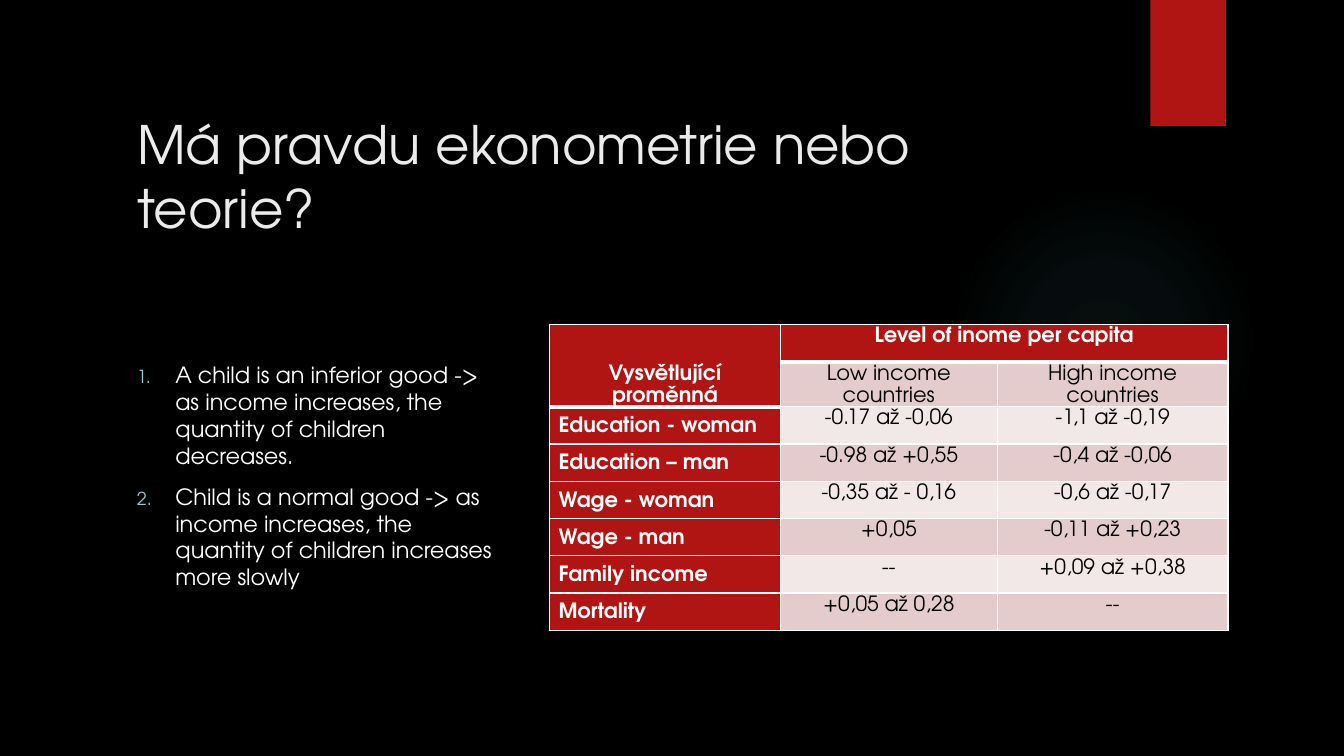
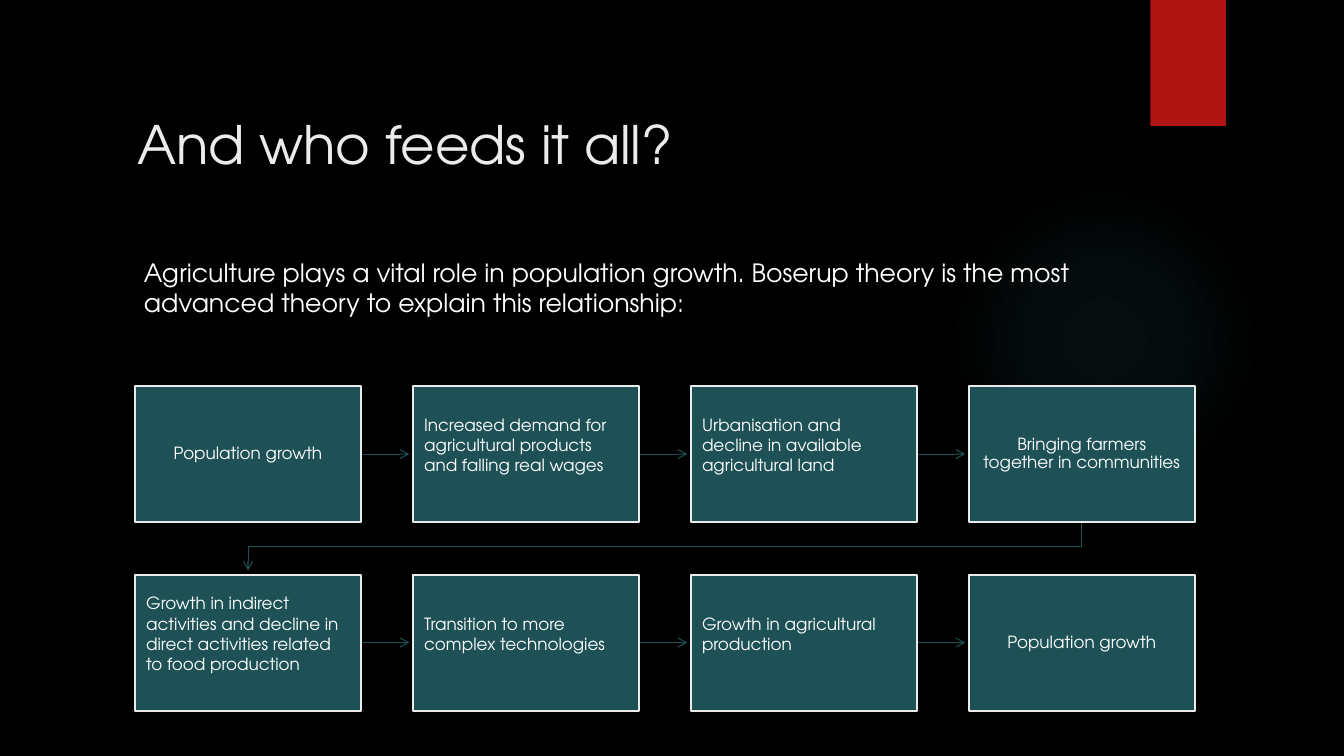
from dataclasses import dataclass

from pptx import Presentation
from pptx.dml.color import RGBColor
from pptx.enum.shapes import MSO_CONNECTOR, MSO_SHAPE
from pptx.enum.text import MSO_ANCHOR, MSO_AUTO_SIZE, PP_ALIGN
from pptx.oxml import parse_xml
from pptx.oxml.ns import nsdecls, qn
from pptx.util import Inches, Pt

STRAIGHT, ELBOW = MSO_CONNECTOR.STRAIGHT, MSO_CONNECTOR.ELBOW
RECT, OVAL = MSO_SHAPE.RECTANGLE, MSO_SHAPE.OVAL
TOP, MIDDLE, BOTTOM = MSO_ANCHOR.TOP, MSO_ANCHOR.MIDDLE, MSO_ANCHOR.BOTTOM
LEFT, CENTER = PP_ALIGN.LEFT, PP_ALIGN.CENTER
FIXED = MSO_AUTO_SIZE.NONE
TITLE_ONLY = 5


@dataclass(frozen=True)
class Theme:
    font: str = "TeX Gyre Adventor"
    backdrop: str = "000000"
    title: str = "EBEBEB"
    text: str = "FFFFFF"
    dark_text: str = "000000"
    accent: str = "B01513"
    band_dark: str = "E4CCCC"
    band_light: str = "F2E8E7"
    step: str = "1E5155"
    number: str = "8AD0D6"
    glow: str = "50B9C1"
    title_size: float = 37.8
    lead_size: float = 18
    list_size: float = 16
    table_size: float = 15
    step_size: float = 12


THEME = Theme()

CLAIMS = [
    "A child is an inferior good -> as income increases, the quantity of children decreases.",
    "Child is a normal good -> as income increases, the quantity of children increases more slowly",
]
ELASTICITIES = [
    ["Vysvětlující proměnná", "Level of inome per capita", ""],
    ["", "Low income countries", "High income countries"],
    ["Education - woman", "-0.17 až -0,06", "-1,1 až -0,19"],
    ["Education – man", "-0.98 až +0,55", "-0,4 až -0,06"],
    ["Wage - woman", "-0,35 až - 0,16", "-0,6 až -0,17"],
    ["Wage - man", "+0,05", "-0,11 až +0,23"],
    ["Family income", "--", "+0,09 až +0,38"],
    ["Mortality", "+0,05 až 0,28", "--"],
]
LEAD = ("Agriculture plays a vital role in population growth. Boserup theory is the most "
        "advanced theory to explain this relationship:")
# Each step: wording, and whether it is centred
STEPS = [
    ("Population growth", True),
    ("Increased demand for agricultural products and falling real wages", False),
    ("Urbanisation and decline in available agricultural land", False),
    ("Bringing farmers together in communities", True),
    ("Growth in indirect activities and decline in direct activities related to food production", False),
    ("Transition to more complex technologies", False),
    ("Growth in agricultural production", False),
    ("Population growth", True),
]


def rgb(code):
    return RGBColor.from_string(code)


def write(paragraph, words, size, color=THEME.text, bold=False, align=LEFT):
    paragraph.alignment = align
    run = paragraph.add_run()
    run.text = words
    run.font.name = THEME.font
    run.font.size = Pt(size)
    run.font.bold = bold
    run.font.color.rgb = rgb(color)


def add_text_frame(slide, box, anchor=TOP):
    frame = slide.shapes.add_textbox(*map(Inches, box)).text_frame
    frame.word_wrap = True
    frame.auto_size = FIXED
    frame.vertical_anchor = anchor
    return frame


def add_plain(slide, preset, box, fill=None):
    shape = slide.shapes.add_shape(preset, *map(Inches, box))
    shape.shadow.inherit = False
    shape.line.fill.background()
    if fill:
        shape.fill.solid()
        shape.fill.fore_color.rgb = rgb(fill)
    else:
        shape.fill.background()
    return shape


# Shared frame: glow, red tab and title
def add_glow(slide, box):
    glow = add_plain(slide, OVAL, box)
    stops = "".join(
        f'<a:gs pos="{place * 1000}"><a:srgbClr val="{THEME.glow}">'
        f'<a:alpha val="{alpha * 1000}"/></a:srgbClr></a:gs>'
        for place, alpha in [(0, 7), (36, 6), (69, 0)])
    gradient = parse_xml(
        f'<a:gradFill {nsdecls("a")}><a:gsLst>{stops}</a:gsLst><a:path path="circle">'
        '<a:fillToRect l="50000" t="50000" r="50000" b="50000"/></a:path></a:gradFill>')
    properties = glow._element.spPr
    properties.replace(properties.find(qn("a:noFill")), gradient)


def new_slide(prs, heading):
    slide = prs.slides.add_slide(prs.slide_layouts[TITLE_ONLY])
    add_glow(slide, (9.41, 1.83, 3.08, 3.08))
    add_plain(slide, RECT, (11.41, 0, 0.75, 1.25), THEME.accent)
    title = slide.shapes.title
    title.left, title.top, title.width, title.height = map(Inches, (1.26, 1.06, 9.58, 0.77))
    frame = title.text_frame
    frame.word_wrap = True
    frame.auto_size = FIXED
    frame.vertical_anchor = TOP
    write(frame.paragraphs[0], heading, THEME.title_size, THEME.title)
    return slide


# Numbered claims
def add_claims(slide, box):
    frame = add_text_frame(slide, box, MIDDLE)
    for index, claim in enumerate(CLAIMS):
        paragraph = frame.add_paragraph() if index else frame.paragraphs[0]
        properties = paragraph._p.get_or_add_pPr()
        properties.set("marL", str(Inches(0.38)))
        properties.set("indent", str(-Inches(0.38)))
        for bullet in (f'<a:buClr {nsdecls("a")}><a:srgbClr val="{THEME.number}"/></a:buClr>',
                       f'<a:buSzPct {nsdecls("a")} val="80000"/>',
                       f'<a:buAutoNum {nsdecls("a")} type="arabicPeriod"/>'):
            properties.append(parse_xml(bullet))
        if index:
            paragraph.space_before = Pt(10)
        write(paragraph, claim, THEME.list_size)


# Table of elasticities
def add_borders(cell, bottom):
    properties = cell._tc.get_or_add_tcPr()
    for side, width in zip("LRTB", (1, 1, 1, bottom)):
        properties.append(parse_xml(
            f'<a:ln{side} {nsdecls("a")} w="{Pt(width)}"><a:solidFill>'
            f'<a:srgbClr val="{THEME.text}"/></a:solidFill></a:ln{side}>'))


def add_elasticities(slide, box, widths, row_height):
    table = slide.shapes.add_table(
        len(ELASTICITIES), len(widths), *map(Inches, box)).table
    table.first_row = table.horz_banding = False
    for column, width in zip(table.columns, widths):
        column.width = Inches(width)
    table.cell(0, 0).merge(table.cell(1, 0))
    table.cell(0, 1).merge(table.cell(0, 2))
    for r, values in enumerate(ELASTICITIES):
        table.rows[r].height = Inches(row_height)
        for c, value in enumerate(values):
            cell = table.cell(r, c)
            header = r == 0 or c == 0
            heavy = r == 0 or (r == 1 and c == 0)
            add_borders(cell, 3 if heavy else 1)
            cell.fill.solid()
            band = THEME.band_dark if r % 2 else THEME.band_light
            cell.fill.fore_color.rgb = rgb(THEME.accent if header else band)
            cell.margin_left = cell.margin_right = Inches(0.09)
            cell.margin_top = cell.margin_bottom = 0
            if c:
                cell.vertical_anchor = TOP
            else:
                cell.vertical_anchor = MIDDLE if r else BOTTOM
            if value:
                paragraph = cell.text_frame.paragraphs[0]
                paragraph.line_spacing = 1.15
                write(paragraph, value, THEME.table_size,
                      THEME.text if header else THEME.dark_text, header,
                      LEFT if r > 1 and c == 0 else CENTER)


# Process chain
def add_arrow(slide, kind, start, end):
    arrow = slide.shapes.add_connector(kind, *map(Inches, (*start, *end)))
    arrow.line.color.rgb = rgb(THEME.step)
    arrow.line.width = Pt(0.75)
    arrow.line._get_or_add_ln().append(
        parse_xml(f'<a:tailEnd {nsdecls("a")} type="arrow"/>'))
    arrow._element.spPr.append(parse_xml(f'<a:effectLst {nsdecls("a")}/>'))
    return arrow


def add_return_arrow(slide, start, end):
    """Elbow going down, left and down: a level elbow turned a quarter."""
    (x1, y1), (x2, y2) = start, end
    mid_x, mid_y = (x1 + x2) / 2, (y1 + y2) / 2
    half_drop, half_run = (y2 - y1) / 2, (x1 - x2) / 2
    arrow = add_arrow(slide, ELBOW, (mid_x - half_drop, mid_y - half_run),
                      (mid_x + half_drop, mid_y + half_run))
    arrow._element.spPr.find(qn("a:xfrm")).set("rot", "5400000")


def add_step(slide, box, words, centred):
    step = add_plain(slide, RECT, box, THEME.step)
    step.line.color.rgb = rgb(THEME.title)
    step.line.width = Pt(1.5)
    frame = step.text_frame
    frame.word_wrap = True
    frame.vertical_anchor = MIDDLE
    frame.margin_left = frame.margin_right = Inches(0.11)
    frame.margin_top = Inches(0.12)
    frame.margin_bottom = Inches(0.12 if centred else 0.3)
    paragraph = frame.paragraphs[0]
    paragraph.line_spacing = 0.9 if centred else 1.0
    write(paragraph, words, THEME.step_size, align=CENTER if centred else LEFT)


def add_chain(slide, box, columns=4, step_width=2.24, step_height=1.35, reach=0.48):
    left, top, width, height = box
    pitch_x = (width - step_width) / (columns - 1)
    pitch_y = height - step_height
    for index, (words, centred) in enumerate(STEPS):
        row, column = divmod(index, columns)
        x, y = left + column * pitch_x, top + row * pitch_y
        if column < columns - 1:
            edge, middle = x + step_width, y + step_height / 2
            add_arrow(slide, STRAIGHT, (edge, middle), (edge + reach, middle))
        elif index < len(STEPS) - 1:
            foot = y + step_height
            add_return_arrow(slide, (x + step_width / 2, foot),
                             (left + step_width / 2, foot + reach))
        add_step(slide, (x, y, step_width, step_height), words, centred)


# Slides
def build_evidence(prs):
    slide = new_slide(prs, "Má pravdu ekonometrie nebo teorie?")
    add_claims(slide, (1.26, 2.85, 3.81, 3.74))
    add_elasticities(slide, (5.45, 3.22, 6.73, 2.96), (2.29, 2.15, 2.29), 0.37)


def build_agriculture(prs):
    slide = new_slide(prs, "And who feeds it all?")
    add_chain(slide, (1.34, 3.83, 10.51, 3.22))
    lead = add_text_frame(slide, (1.33, 2.5, 10.64, 0.71))
    write(lead.paragraphs[0], LEAD, THEME.lead_size)


def main():
    prs = Presentation()
    prs.slide_width, prs.slide_height = Inches(13.33), Inches(7.5)
    backdrop = prs.slide_master.background.fill
    backdrop.solid()
    backdrop.fore_color.rgb = rgb(THEME.backdrop)
    build_evidence(prs)
    build_agriculture(prs)
    prs.save("out.pptx")


if __name__ == "__main__":
    main()
